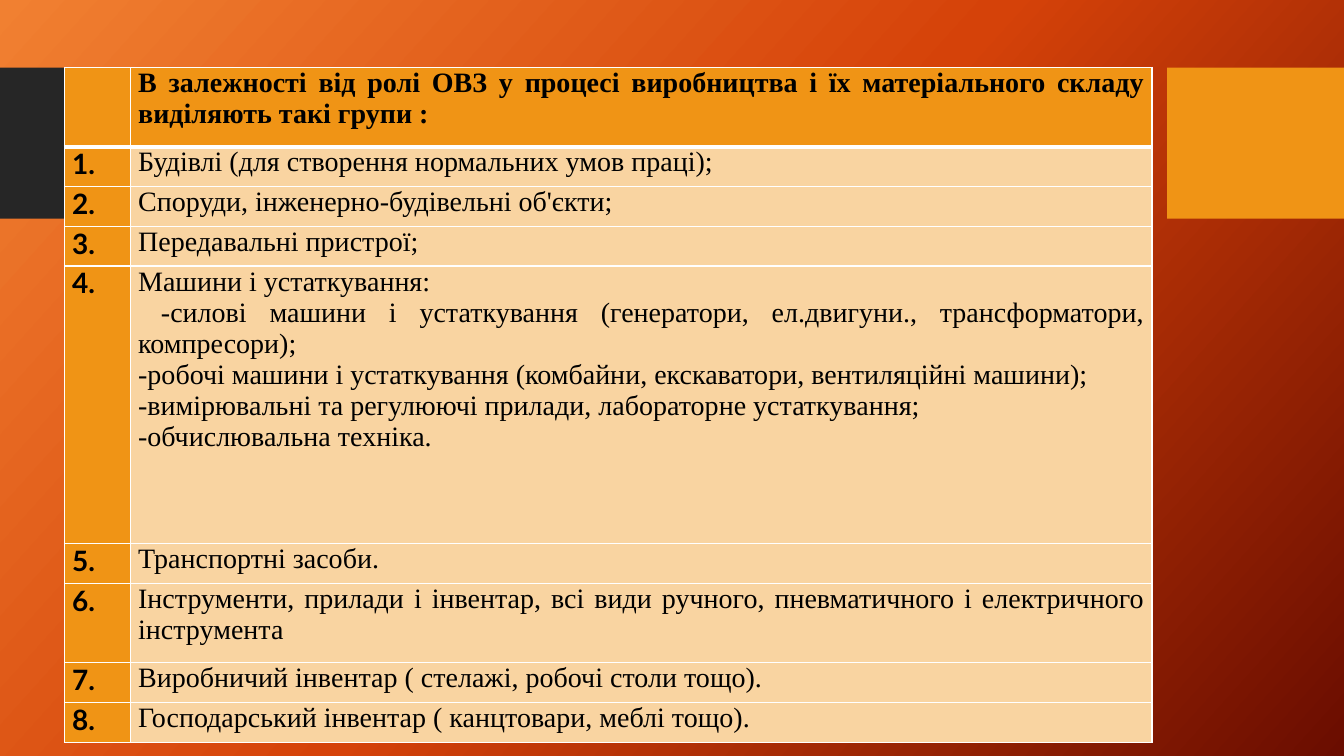
from copy import deepcopy

from lxml import etree
from pptx import Presentation
from pptx.dml.color import RGBColor
from pptx.enum.shapes import MSO_SHAPE
from pptx.enum.text import PP_ALIGN
from pptx.oxml.ns import qn
from pptx.util import Pt

RECT = MSO_SHAPE.RECTANGLE
JUSTIFY = PP_ALIGN.JUSTIFY

# Content: (height in row units, lines of text)
HEADER = (2, ["В залежності від ролі ОВЗ у процесі виробництва і їх матеріального складу виділяють такі групи :"])
GROUPS = [
    (1, ["Будівлі (для створення нормальних умов праці);"]),
    (1, ["Споруди, інженерно-будівельні об'єкти;"]),
    (1, ["Передавальні пристрої;"]),
    (7, [
        "Машини і устаткування:",
        " -силові машини і устаткування (генератори, ел.двигуни., трансформатори, компресори);",
        "-робочі машини і устаткування (комбайни, екскаватори, вентиляційні машини);",
        "-вимірювальні та регулюючі прилади, лабораторне устаткування;",
        "-обчислювальна техніка.",
    ]),
    (1, ["Транспортні засоби."]),
    (2, ["Інструменти, прилади і інвентар, всі види ручного, пневматичного і електричного інструмента"]),
    (1, ["Виробничий інвентар ( стелажі, робочі столи тощо)."]),
    (1, ["Господарський інвентар ( канцтовари, меблі тощо)."]),
]

THEME = {
    "orange": "F09415", "peach": "F9D4A1", "dark": "262626",
    "text": "000000", "line": "FFFFFF",
    "background": [(0, "F18031"), (0.5, "D54209"), (1, "6A0D00")], "angle": 42,
    "number_font": "Lato", "body_font": "Times New Roman", "size": 20,
    "thin": 1, "thick": 3,
}

# Layout in points
WIDTH, HEIGHT = 960, 540
TOP = 48.24
BAND_HEIGHT = 108
BANDS = [(0, 821.5, "dark"), (833.76, 126.24, "orange")]
TABLE_LEFT = 46.08
COLUMNS = [47.2, 729.6]
ROW_UNIT = 28.35
INSET = 5.4


def rgb(name):
    return RGBColor.from_string(THEME[name])


def paint_background(slide):
    fill = slide.background.fill
    fill.gradient()
    fill.gradient_angle = 360 - THEME["angle"]
    first = fill.gradient_stops[0]._gs
    first.addnext(deepcopy(first))
    for stop, (position, color) in zip(fill.gradient_stops, THEME["background"]):
        stop.position = position
        stop.color.rgb = RGBColor.from_string(color)


def set_borders(cell, top, bottom):
    tc_pr = cell._tc.get_or_add_tcPr()
    widths = {"lnL": THEME["thin"], "lnR": THEME["thin"], "lnT": top, "lnB": bottom}
    for tag, width in widths.items():
        ln = etree.SubElement(tc_pr, qn(f"a:{tag}"), w=str(Pt(width)))
        solid = etree.SubElement(ln, qn("a:solidFill"))
        etree.SubElement(solid, qn("a:srgbClr"), val=THEME["line"])


def fill_cell(cell, lines, font, bold, color):
    cell.fill.solid()
    cell.fill.fore_color.rgb = rgb(color)
    cell.margin_left = cell.margin_right = Pt(INSET)
    cell.margin_top = cell.margin_bottom = 0
    tf = cell.text_frame
    tf.text = "\n".join(lines)
    for p in tf.paragraphs:
        p.alignment = JUSTIFY
        for r in p.runs:
            r.font.name = THEME[font]
            r.font.size = Pt(THEME["size"])
            r.font.bold = bold
            r.font.color.rgb = rgb("text")


prs = Presentation()
prs.slide_width, prs.slide_height = Pt(WIDTH), Pt(HEIGHT)
slide = prs.slides.add_slide(prs.slide_layouts[6])
paint_background(slide)

# Bands behind the table
for left, width, color in BANDS:
    sp = slide.shapes.add_shape(RECT, Pt(left), Pt(TOP), Pt(width), Pt(BAND_HEIGHT))
    sp.shadow.inherit = False
    sp.fill.solid()
    sp.fill.fore_color.rgb = rgb(color)
    sp.line.fill.background()

# Table of groups
rows = [HEADER] + GROUPS
table_height = ROW_UNIT * sum(units for units, _ in rows)
table = slide.shapes.add_table(len(rows), len(COLUMNS), Pt(TABLE_LEFT), Pt(TOP),
                               Pt(sum(COLUMNS)), Pt(table_height)).table
for column, width in zip(table.columns, COLUMNS):
    column.width = Pt(width)

for i, (units, lines) in enumerate(rows):
    table.rows[i].height = Pt(ROW_UNIT * units)
    is_header = i == 0
    number, body = table.cell(i, 0), table.cell(i, 1)
    for cell in (number, body):
        set_borders(cell, THEME["thick" if i == 1 else "thin"],
                    THEME["thick" if is_header else "thin"])
    fill_cell(number, [] if is_header else [f"{i}."], "number_font", True, "orange")
    fill_cell(body, lines, "body_font", is_header, "orange" if is_header else "peach")

prs.save("out.pptx")
